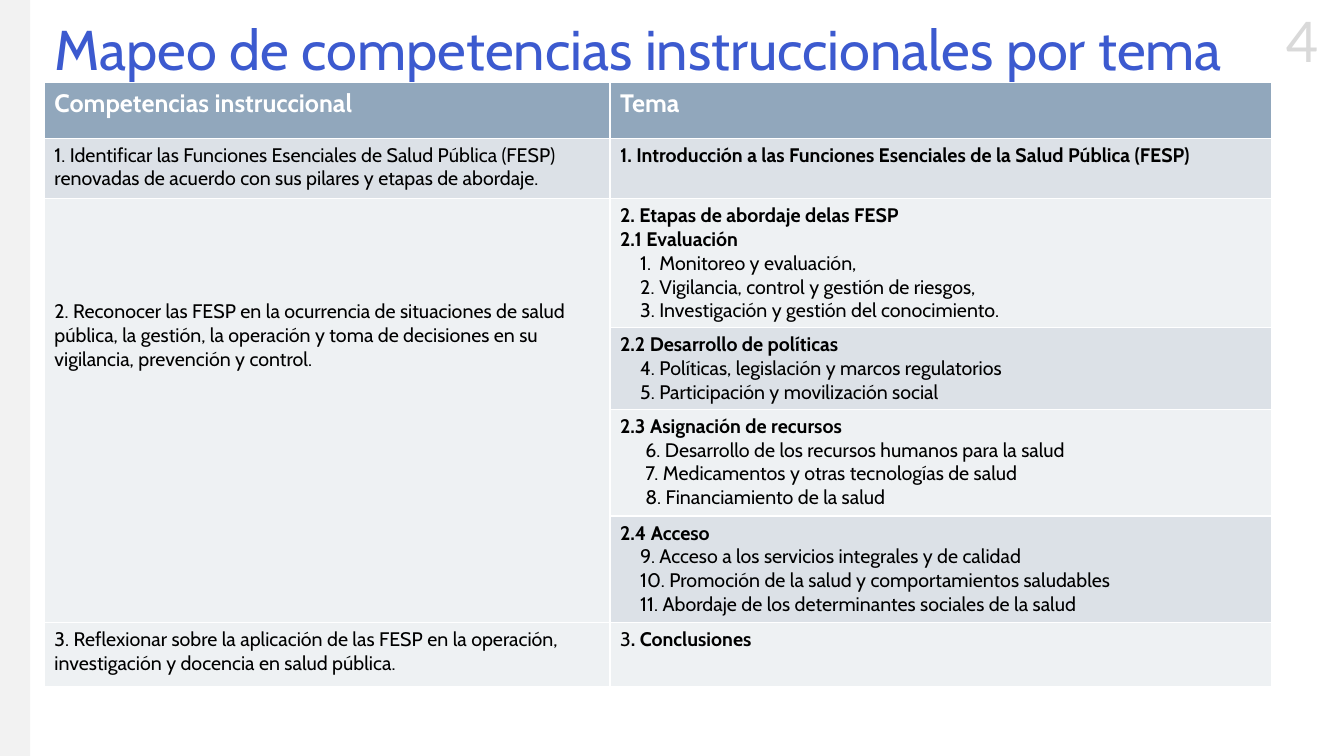
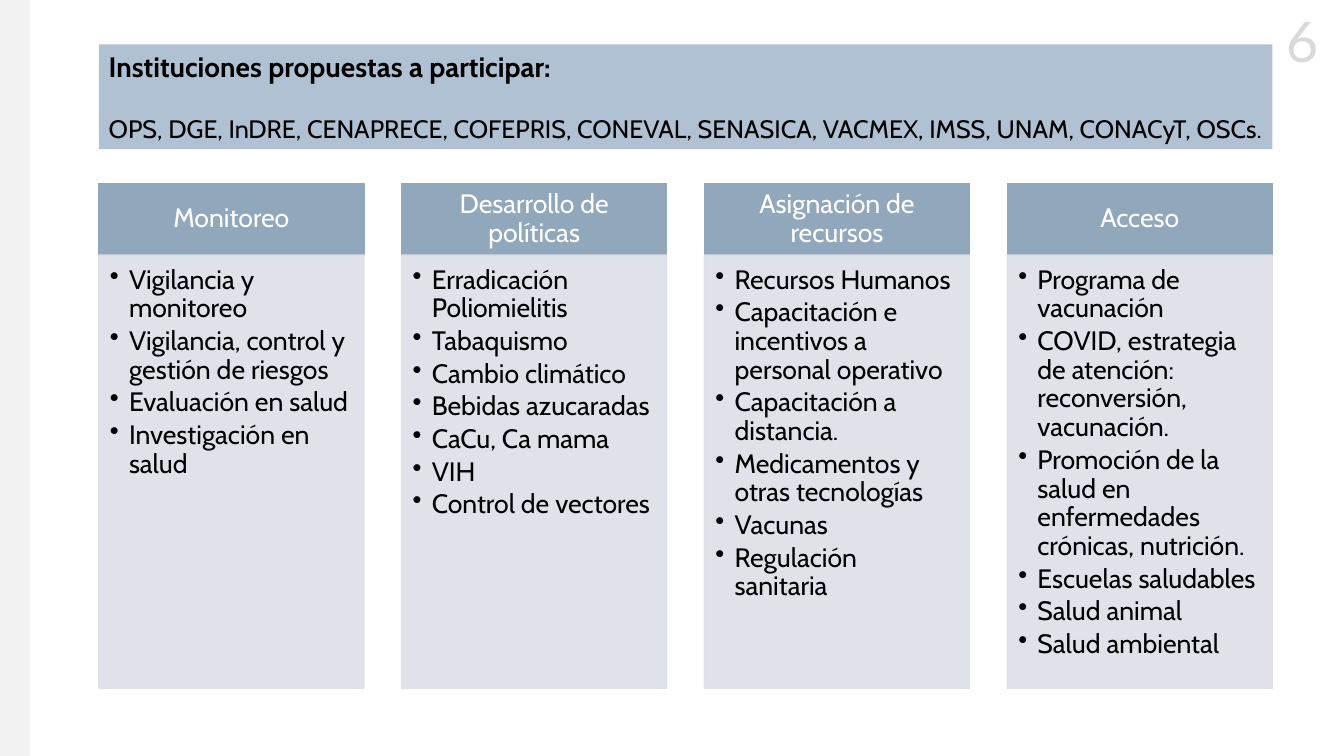
from pptx import Presentation
from pptx import util as u
from pptx.dml.color import RGBColor
from pptx.enum import shapes, text
from pptx.oxml.ns import qn
from lxml import etree

W, H = 13.33, 7.5
FONT, NUMBER_FONT = "Cabin", "Lato"
WHITE, BLACK, BLUE = "FFFFFF", "000000", "3C5ACF"
RAIL, NUMBER = "F2F2F2", "D9D9D9"
STEEL, BANNER, BAND, PALE = "91A7BC", "B0C1D3", "DCE1E7", "EEF1F3"
LEFT, RIGHT = 0.98, 12.62

TOPICS = [
    (BAND, "1. Identificar las Funciones Esenciales de Salud Pública (FESP) renovadas de "
     "acuerdo con sus pilares y etapas de abordaje.",
     ["1. Introducción a las Funciones Esenciales de la Salud Pública (FESP)"], [], 0),
    (PALE, "2. Reconocer las FESP en la ocurrencia de situaciones de salud pública, la gestión, "
     "la operación y toma de decisiones en su vigilancia, prevención y control.",
     ["2. Etapas de abordaje delas FESP", "2.1 Evaluación"],
     ["Monitoreo y evaluación,", "Vigilancia, control y gestión de riesgos,",
      "Investigación y gestión del conocimiento."], 1),
    (BAND, None, ["2.2 Desarrollo de políticas"],
     ["4. Políticas, legislación y marcos regulatorios",
      "5. Participación y movilización social"], 0.19),
    (PALE, None, ["2.3 Asignación de recursos"],
     ["6. Desarrollo de los recursos humanos para la salud",
      "7. Medicamentos y otras tecnologías de salud", "8. Financiamiento de la salud"], 0.14),
    (BAND, None, ["2.4 Acceso"],
     ["9. Acceso a los servicios integrales y de calidad",
      "10. Promoción de la salud y comportamientos saludables",
      "11. Abordaje de los determinantes sociales de la salud"], 0.19),
    (PALE, "3. Reflexionar sobre la aplicación de las FESP en la operación, investigación y "
     "docencia en salud pública.", [("3", ". Conclusiones")], [], 0),
]
ROW_HEIGHTS = [0.55, 0.6, 1.28, 0.81, 1.06, 1.06, 0.63]
COLUMN_WIDTHS = [5.61, 6.56]

PILLARS = [
    ("Monitoreo", ["Vigilancia y monitoreo", "Vigilancia, control y gestión de riesgos",
                   "Evaluación en salud", "Investigación en salud"]),
    ("Desarrollo de políticas", ["Erradicación Poliomielitis", "Tabaquismo", "Cambio climático",
                                 "Bebidas azucaradas", "CaCu, Ca mama", "VIH",
                                 "Control de vectores"]),
    ("Asignación de recursos", ["Recursos Humanos",
                                "Capacitación e incentivos a personal operativo",
                                "Capacitación a distancia.", "Medicamentos y otras tecnologías",
                                "Vacunas", "Regulación sanitaria"]),
    ("Acceso", ["Programa de vacunación",
                "COVID, estrategia de atención: reconversión, vacunación.",
                "Promoción de la salud en enfermedades crónicas, nutrición.",
                "Escuelas saludables", "Salud animal", "Salud ambiental"]),
]


def rgb(color):
    """Turn a hex string into a colour."""
    return RGBColor.from_string(color)


def add_run(p, words, size, color=BLACK, bold=False, font=FONT):
    """Append one formatted run to a paragraph."""
    r = p.add_run()
    r.text = words
    r.font.name, r.font.size, r.font.bold = font, u.Pt(size), bold
    r.font.color.rgb = rgb(color)


def next_paragraph(tf):
    """Return the empty first paragraph of a frame, or a new one."""
    p = tf.paragraphs[0]
    return tf.add_paragraph() if p.runs else p


def hang(p, margin, indent, bullet=None, **attrs):
    """Give a paragraph a hanging indent and an optional bullet element."""
    pPr = p._p.get_or_add_pPr()
    pPr.set("marL", str(u.Inches(margin)))
    pPr.set("indent", str(-u.Inches(indent)))
    if bullet:
        etree.SubElement(pPr, qn("a:" + bullet), attrs)


def set_insets(frame, left, top, right, bottom):
    """Set the inner margins of a text frame or cell in inches."""
    frame.margin_left, frame.margin_top = u.Inches(left), u.Inches(top)
    frame.margin_right, frame.margin_bottom = u.Inches(right), u.Inches(bottom)


def add_rect(s, box, fill, outlined=False, opacity=None):
    """Add a flat rectangle with top-anchored, wrapping text."""
    sp = s.shapes.add_shape(shapes.MSO_SHAPE.RECTANGLE, *map(u.Inches, box))
    sp.shadow.inherit = False
    fills = [sp.fill]
    if outlined:
        sp.line.width = u.Pt(1)
        fills.append(sp.line.fill)
    else:
        sp.line.fill.background()
    for f in fills:
        f.solid()
        f.fore_color.rgb = rgb(fill)
    if opacity:
        for clr in sp._element.spPr.iter(qn("a:srgbClr")):
            etree.SubElement(clr, qn("a:alpha"), val=str(opacity * 1000))
    sp.text_frame.word_wrap = True
    sp.text_frame.vertical_anchor = text.MSO_ANCHOR.TOP
    return sp


def add_frame(prs, layout, number):
    """Start a slide with the side rail and the page number."""
    s = prs.slides.add_slide(prs.slide_layouts.get_by_name(layout))
    add_rect(s, (0, 0, 0.3, H), RAIL)
    tf = s.shapes.add_textbox(*map(u.Inches, (12.54, 0.02, 0.75, 0.77))).text_frame
    tf.word_wrap = False
    p = tf.paragraphs[0]
    p.alignment = text.PP_ALIGN.CENTER
    add_run(p, number, 40, NUMBER, font=NUMBER_FONT)
    return s


def set_title(s, words, box):
    """Place and format the title placeholder."""
    sp = s.shapes.title
    sp.left, sp.top, sp.width, sp.height = map(u.Inches, box)
    tf = sp.text_frame
    tf.word_wrap, tf.vertical_anchor = True, text.MSO_ANCHOR.MIDDLE
    p = tf.paragraphs[0]
    p.alignment, p.line_spacing = text.PP_ALIGN.LEFT, 0.9
    add_run(p, words, 40, BLUE)


def fill_topic(tf, headings, items, hanging):
    """Write bold headings and indented items; a hanging of 1 numbers the items."""
    for heading in headings:
        p = next_paragraph(tf)
        plain, bold = heading if isinstance(heading, tuple) else ("", heading)
        if plain:
            add_run(p, plain, 14)
        add_run(p, bold, 14, bold=True)
    for item in items:
        p = next_paragraph(tf)
        if hanging == 1:
            hang(p, 0.39, 0.19, "buAutoNum", type="arabicPeriod")
        else:
            hang(p, 0.39, hanging)
        add_run(p, item, 14)


def add_topic_table(s, left, top):
    """Add the table that maps competencies to topics."""
    table = s.shapes.add_table(len(ROW_HEIGHTS), 2, u.Inches(left), u.Inches(top),
                               u.Inches(sum(COLUMN_WIDTHS)), u.Inches(sum(ROW_HEIGHTS))).table
    table.horz_banding = False
    for column, width in zip(table.columns, COLUMN_WIDTHS):
        column.width = u.Inches(width)
    for row, height in zip(table.rows, ROW_HEIGHTS):
        row.height = u.Inches(height)
    fills = [STEEL] + [topic[0] for topic in TOPICS]
    for row, fill in zip(table.rows, fills):
        for cell in row.cells:
            cell.fill.solid()
            cell.fill.fore_color.rgb = rgb(fill)
    for cell, words in zip(table.rows[0].cells, ("Competencias instruccional", "Tema")):
        add_run(cell.text_frame.paragraphs[0], words, 18, WHITE, True)
    for i, (_, competency, headings, items, hanging) in enumerate(TOPICS, 1):
        if competency:
            add_run(table.cell(i, 0).text_frame.paragraphs[0], competency, 14)
        fill_topic(table.cell(i, 1).text_frame, headings, items, hanging)
    shared = table.cell(2, 0)
    shared.merge(table.cell(5, 0))
    shared.margin_top = u.Inches(1)


def add_banner(s, box, heading, words):
    """Add the band that lists the institutions."""
    tf = add_rect(s, box, BANNER).text_frame
    for line, size, bold in ((heading, 20, True), (words, 18, False)):
        p = next_paragraph(tf)
        p.alignment = text.PP_ALIGN.LEFT
        add_run(p, line, size, bold=bold)
    p.space_before = u.Pt(22)


def add_pillar(s, box, heading, items):
    """Add a headed card with a bulleted list."""
    left, top, width, height = box
    head = 0.71
    tf = add_rect(s, (left, top, width, head), STEEL, outlined=True).text_frame
    tf.vertical_anchor = text.MSO_ANCHOR.MIDDLE
    set_insets(tf, 0.15, 0.08, 0.15, 0.08)
    p = tf.paragraphs[0]
    p.alignment, p.line_spacing = text.PP_ALIGN.CENTER, 0.9
    add_run(p, heading, 19, WHITE)
    tf = add_rect(s, (left, top + head, width, height - head), BAND, True, 90).text_frame
    set_insets(tf, 0.11, 0.11, 0.15, 0.17)
    for item in items:
        p = next_paragraph(tf)
        hang(p, 0.19, 0.19, "buChar", char="•")
        p.alignment, p.line_spacing, p.space_after = text.PP_ALIGN.LEFT, 0.9, u.Pt(2.8)
        add_run(p, item, 19)


def add_pillars(s, left, top, width, height, card=2.63):
    """Spread the pillar cards evenly over a box."""
    step = (width - card) / (len(PILLARS) - 1)
    for i, (heading, items) in enumerate(PILLARS):
        add_pillar(s, (left + i * step, top, card, height), heading, items)


def build_mapping(prs):
    """Build the slide that maps competencies to topics."""
    s = add_frame(prs, "Title Only", "4")
    set_title(s, "Mapeo de competencias instruccionales por tema", (0.44, -0.01, 12.45, 1.05))
    add_topic_table(s, 0.44, 0.82)


def build_institutions(prs):
    """Build the slide of institutions and pillars."""
    s = add_frame(prs, "Blank", "6")
    add_pillars(s, LEFT, 1.82, RIGHT - LEFT, 5.01)
    add_banner(s, (LEFT, 0.44, RIGHT - LEFT, 1.04), "Instituciones propuestas a participar:",
               "OPS, DGE, InDRE, CENAPRECE, COFEPRIS, CONEVAL, SENASICA, VACMEX, IMSS, UNAM, "
               "CONACyT, OSCs.")


def main():
    """Build and save the presentation."""
    prs = Presentation()
    prs.slide_width, prs.slide_height = u.Inches(W), u.Inches(H)
    build_mapping(prs)
    build_institutions(prs)
    prs.save("out.pptx")


if __name__ == "__main__":
    main()
